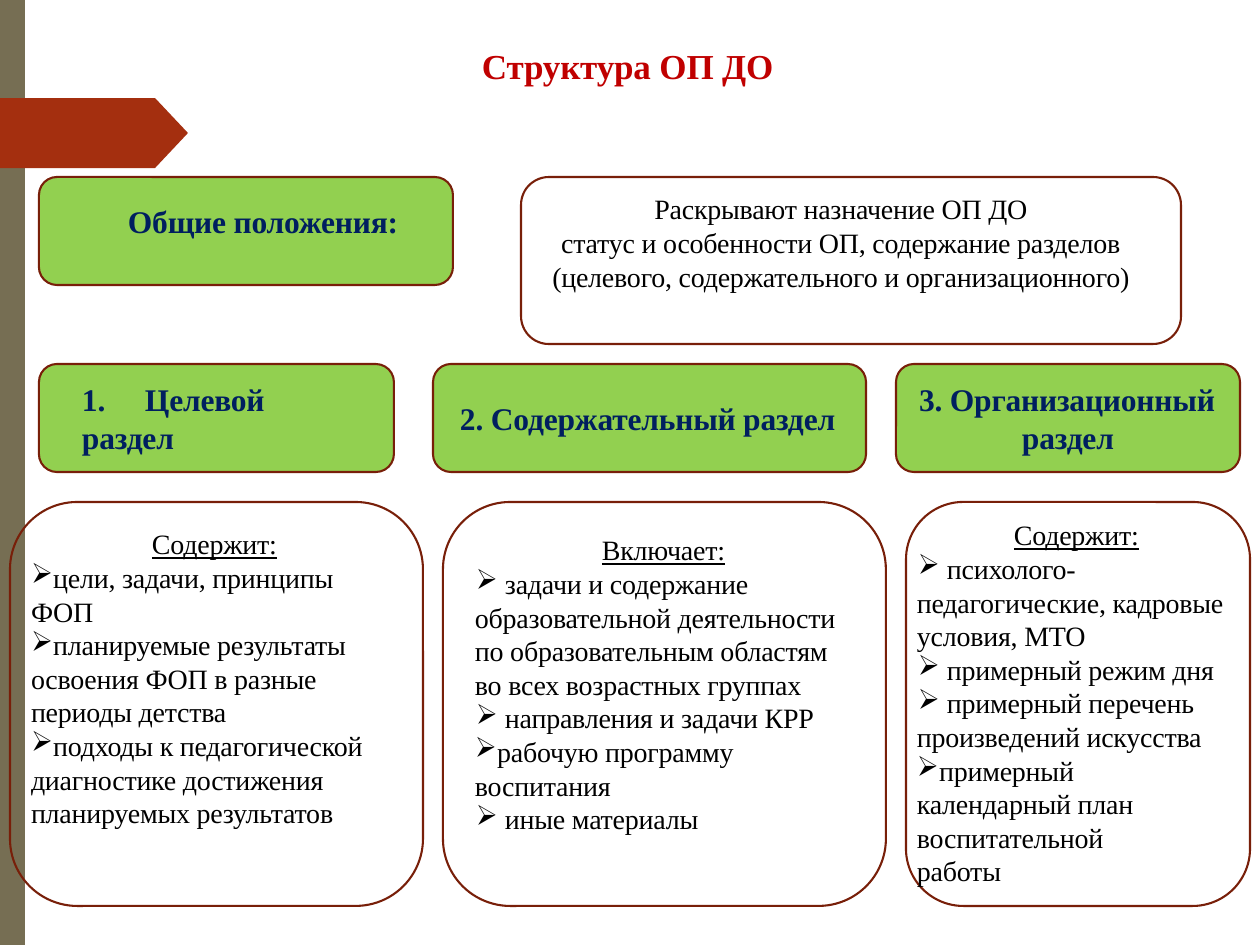
from lxml import etree
from pptx import Presentation, util as u
from pptx.dml.color import RGBColor
from pptx.enum import shapes, text
from pptx.oxml.ns import qn

SCALE = 914400 / 126
FONT = "Times New Roman"
RED, NAVY, GREEN, BORDER, BLACK = "C00000", "001F5F", "92D050", "781F09", "000000"
ROUNDED = shapes.MSO_SHAPE.ROUNDED_RECTANGLE

TITLE = ("Структура ОП ДО", (481, 42, 298, 45))
HEADINGS = [
    ("Общие положения:", (39, 177, 414, 108), (127, 200, 276, 42), {}),
    ("1.\tЦелевой раздел", (39, 364, 355, 108), (81, 378, 272, 42), {"tab": 49}),
    ("2. Содержательный раздел", (433, 364, 433, 108), (459, 397, 383, 42), {}),
    ("3. Организационный раздел", (896, 364, 344, 108), (917, 378, 303, 79),
     {"left": 105, "first": -103}),
]
PURPOSE = ([
    "Раскрывают назначение ОП ДО",
    "статус и особенности ОП, содержание разделов",
    "(целевого, содержательного и организационного)",
], (521, 177, 660, 167), (545, 190, 592, 105))

PLAIN = {"left": 1}
TIGHT = {"left": 1, "bullet": "➢"}
HANGING = {"left": 31, "first": -29, "bullet": "➢"}
NARROW = {"right": 45}
SECTIONS = [
    ((10, 502, 413, 404), (30, 525, 348, 306), ("Содержит:", 122), [
        ("цели, задачи, принципы ФОП", TIGHT),
        ("планируемые результаты освоения ФОП в разные периоды детства", TIGHT),
        ("подходы к педагогической диагностике достижения планируемых результатов", TIGHT),
    ]),
    ((443, 502, 443, 404), (474, 531, 370, 306), ("Включает:", 128), [
        ("задачи и содержание", HANGING),
        ("образовательной деятельности по образовательным областям "
         "во всех возрастных группах", PLAIN),
        ("направления и задачи КРР", HANGING),
        ("рабочую программу воспитания", TIGHT),
        ("иные материалы", HANGING),
    ]),
    ((906, 502, 344, 404), (916, 516, 316, 339), ("Содержит:", 98), [
        ("психолого-", HANGING),
        ("педагогические, кадровые условия, МТО", PLAIN),
        ("примерный режим дня", HANGING),
        ("примерный перечень", HANGING),
        ("произведений искусства", PLAIN),
        ("примерный календарный план", TIGHT | NARROW),
        ("воспитательной работы", PLAIN | NARROW),
    ]),
]


def px(value):
    """Turn pixels into EMU."""
    return u.Emu(round(value * SCALE))


def color(value):
    """Turn a hex string into a colour."""
    return RGBColor.from_string(value)


def add_shape(slide, kind, box, fill=None, line=None):
    """Add a preset shape with optional fill and outline."""
    shape = slide.shapes.add_shape(kind, *map(px, box))
    shape.shadow.inherit = False
    if fill:
        shape.fill.solid()
        shape.fill.fore_color.rgb = color(fill)
    else:
        shape.fill.background()
    if line:
        shape.line.color.rgb = color(line)
        shape.line.width = u.Pt(1.2)
    else:
        shape.line.fill.background()
    return shape


def prepare_frame(shape):
    """Give a text frame its insets and wrapping, and return it."""
    frame = shape.text_frame
    frame.word_wrap = True
    frame.auto_size = text.MSO_AUTO_SIZE.NONE
    frame.vertical_anchor = text.MSO_ANCHOR.TOP
    frame.margin_left = frame.margin_right = frame.margin_bottom = 0
    frame.margin_top = px(2)
    return frame


def add_frame(slide, box):
    """Add a text box and return its frame."""
    return prepare_frame(slide.shapes.add_textbox(*map(px, box)))


def write(frame, content, size=16, fill=BLACK, bold=False, underline=False,
          align=text.PP_ALIGN.LEFT, left=0, first=0, right=0, bullet=None, tab=None):
    """Write one formatted paragraph into a text frame."""
    paragraph = frame.paragraphs[0]
    if paragraph.runs:
        paragraph = frame.add_paragraph()
    paragraph.alignment = align
    paragraph.space_before = u.Pt(0)
    properties = paragraph._p.get_or_add_pPr()
    for name, value in (("marL", left), ("marR", right), ("indent", first)):
        properties.set(name, str(px(value)))
    if bullet:
        etree.SubElement(properties, qn("a:buChar")).set("char", bullet)
    else:
        etree.SubElement(properties, qn("a:buNone"))
    if tab:
        stop = etree.SubElement(etree.SubElement(properties, qn("a:tabLst")), qn("a:tab"))
        stop.set("pos", str(px(tab)))
        stop.set("algn", "l")
    run = paragraph.add_run()
    run.text = content
    font = run.font
    font.name, font.size, font.bold, font.underline = FONT, u.Pt(size), bold, underline
    font.color.rgb = color(fill)
    run._r.get_or_add_rPr().set("spc", "-10")


def main():
    """Build the slide and save it."""
    presentation = Presentation()
    presentation.slide_width, presentation.slide_height = px(1260), px(945)
    slide = presentation.slides.add_slide(presentation.slide_layouts[5])

    add_shape(slide, shapes.MSO_SHAPE.RECTANGLE, (0, 0, 25, 945), "766E53")
    arrow = add_shape(slide, shapes.MSO_SHAPE.PENTAGON, (0, 98, 188, 70), "A42F0F")
    arrow.adjustments[0] = 0.47

    title = slide.shapes.title
    content, box = TITLE
    title.left, title.top, title.width, title.height = map(px, box)
    write(prepare_frame(title), content, size=20, fill=RED, bold=True, left=1)

    for content, box, text_box, layout in HEADINGS:
        add_shape(slide, ROUNDED, box, GREEN, BORDER)
        write(add_frame(slide, text_box), content, size=18, fill=NAVY, bold=True,
              **({"left": 1} | layout))

    lines, box, text_box = PURPOSE
    add_shape(slide, ROUNDED, box, line=BORDER)
    frame = add_frame(slide, text_box)
    for content in lines:
        write(frame, content, align=text.PP_ALIGN.CENTER)

    for box, text_box, (heading, indent), items in SECTIONS:
        add_shape(slide, ROUNDED, box, line=BORDER)
        frame = add_frame(slide, text_box)
        write(frame, heading, underline=True, left=indent)
        for content, layout in items:
            write(frame, content, **layout)

    presentation.save("out.pptx")


if __name__ == "__main__":
    main()
